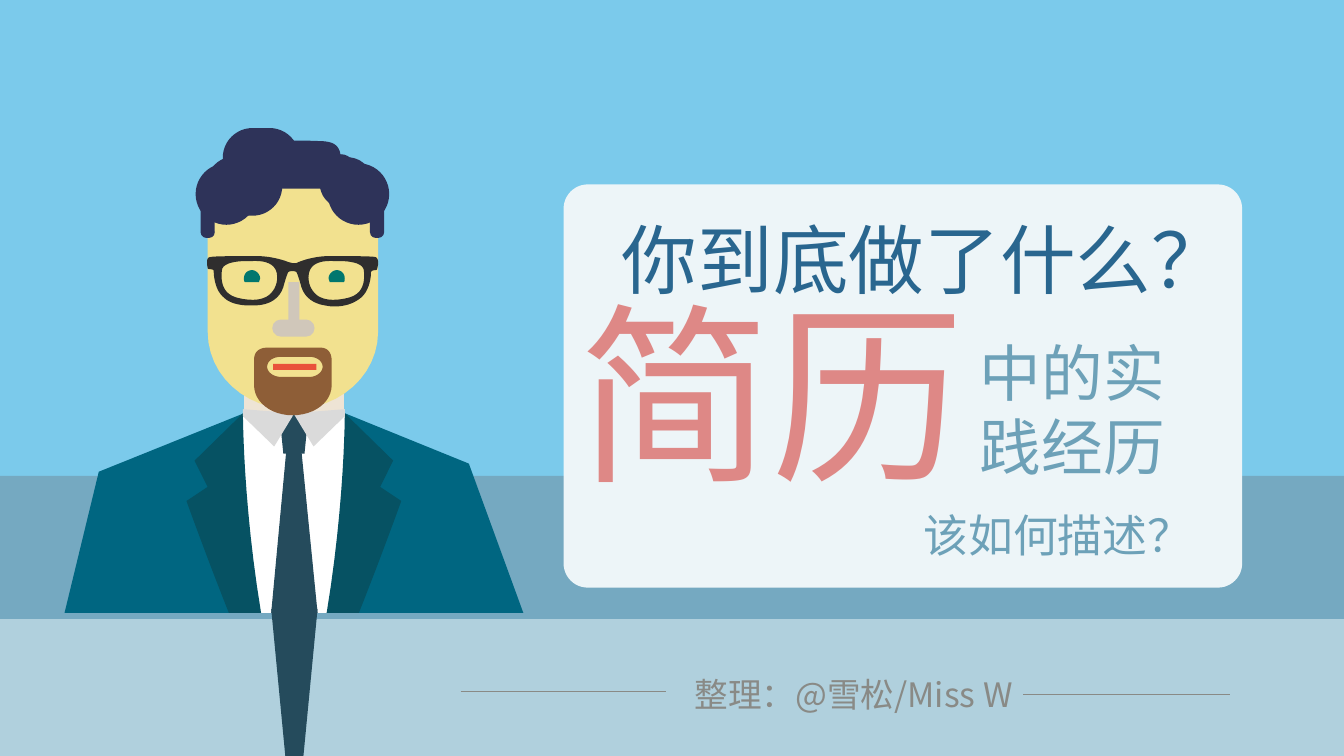
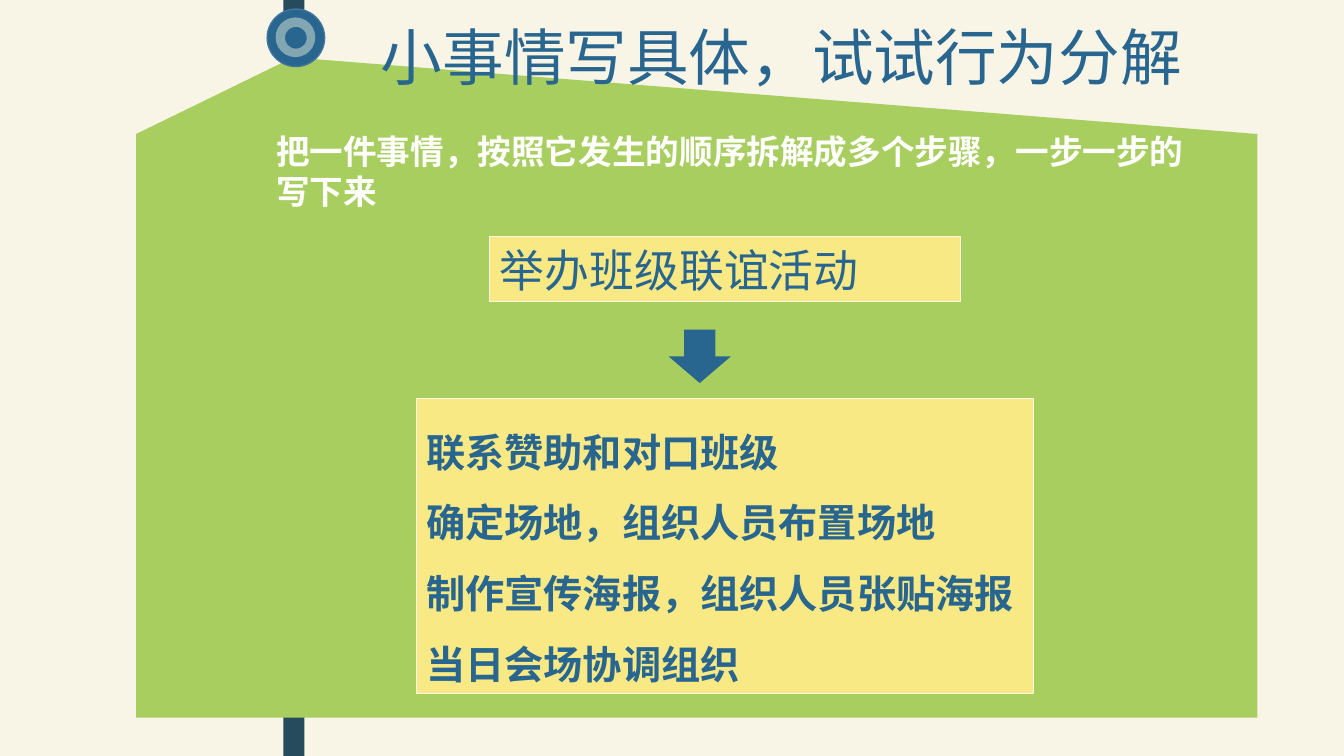
from dataclasses import dataclass, replace
from typing import Any, Optional

import lxml.etree
import pptx
import pptx.dml.color
import pptx.enum.shapes
import pptx.enum.text
import pptx.oxml.ns
import pptx.util

EMU_PER_PX = 9144
SLIDE_WIDTH, SLIDE_HEIGHT = 1333, 750
CURVE_STEPS = 12
HEAD_AXIS, JACKET_AXIS, EYE_AXIS, GLASSES_AXIS = 580, 583, 584, 581

KIND = pptx.enum.shapes.MSO_SHAPE
ALIGN = pptx.enum.text.PP_ALIGN
Contour = tuple[tuple[int, ...], ...]


@dataclass(frozen=True)
class Theme:
    paper: str = "F8F5E7"
    sky: str = "7BCAEB"
    desk: str = "B0D0DD"
    wall: str = "75A9C1"
    card: str = "EDF5F8"
    blue: str = "29668F"
    ring_edge: str = "43739E"
    ring: str = "83A6B3"
    soft_blue: str = "6DA1B8"
    coral: str = "DE8886"
    gray: str = "898A86"
    green: str = "A8CE5F"
    yellow: str = "F8E985"
    white: str = "FFFFFF"
    navy: str = "254B5C"
    skin: str = "F2E18F"
    hair: str = "2E3359"
    neck: str = "EEE4D5"
    jacket: str = "006681"
    lapel: str = "065263"
    collar: str = "DADADA"
    lips: str = "E9523B"
    beard: str = "8E5E37"
    nose: str = "D0C7BA"
    eye: str = "01776E"
    glasses: str = "2F2E2E"
    font: str = "Noto Sans CJK JP"
    accent_font: str = "Noto Sans CJK SC"
    hero: int = 138
    headline: int = 54
    title: int = 44
    subtitle: int = 32
    steps: int = 28
    body: int = 24


THEME = Theme()


@dataclass(frozen=True)
class Block:
    kind: Any
    left: int
    top: int
    width: int
    height: int
    fill: str
    edge: Optional[str] = None
    edge_width: float = 1
    adjust: Optional[float] = None


@dataclass(frozen=True)
class Outline:
    fill: str
    contours: tuple[Contour, ...]


@dataclass(frozen=True)
class Wording:
    lines: tuple[str, ...]
    size: int
    color: str
    font: str = THEME.font
    bold: bool = False
    wrap: bool = True
    spacing: Optional[float] = None
    align: Any = ALIGN.LEFT


@dataclass(frozen=True)
class Label:
    left: int
    top: int
    width: int
    height: int
    wording: Wording


def px(value: float) -> int:
    return round(value * EMU_PER_PX)


def rgb(color: str) -> pptx.dml.color.RGBColor:
    return pptx.dml.color.RGBColor.from_string(color)


def mirror_contour(contour: Contour, axis: int) -> Contour:
    return tuple(
        tuple(axis - v if i % 2 == 0 else v for i, v in enumerate(step)) for step in contour
    )


def mirror(part: Block | Outline, axis: int) -> Block | Outline:
    if isinstance(part, Block):
        return replace(part, left=axis - part.left - part.width)
    return replace(part, contours=tuple(mirror_contour(c, axis) for c in part.contours))


def paint(shape: Any, fill: str, edge: Optional[str] = None, edge_width: float = 1) -> None:
    shape.shadow.inherit = False
    shape.fill.solid()
    shape.fill.fore_color.rgb = rgb(fill)
    if edge is None:
        shape.line.fill.background()
    else:
        shape.line.color.rgb = rgb(edge)
        shape.line.width = pptx.util.Pt(edge_width)


def flatten(contour: Contour) -> list[tuple[int, int]]:
    points = [(float(contour[0][0]), float(contour[0][1]))]
    for step in contour[1:]:
        if len(step) == 2:
            points.append((step[0], step[1]))
            continue
        x0, y0 = points[-1]
        x1, y1, x2, y2, x3, y3 = step
        for i in range(1, CURVE_STEPS + 1):
            t = i / CURVE_STEPS
            a, b, c, d = (1 - t) ** 3, 3 * t * (1 - t) ** 2, 3 * t * t * (1 - t), t**3
            points.append((a * x0 + b * x1 + c * x2 + d * x3, a * y0 + b * y1 + c * y2 + d * y3))
    return [(px(x), px(y)) for x, y in points]


def draw(shapes: Any, part: Block | Outline) -> Any:
    if isinstance(part, Block):
        shape = shapes.add_shape(
            part.kind, px(part.left), px(part.top), px(part.width), px(part.height)
        )
        if part.adjust is not None:
            shape.adjustments[0] = part.adjust
        paint(shape, part.fill, part.edge, part.edge_width)
        return shape
    outer, *holes = [flatten(contour) for contour in part.contours]
    builder = shapes.build_freeform(*outer[0], scale=1.0)
    builder.add_line_segments(outer[1:], close=True)
    for hole in holes:
        builder.move_to(*hole[0])
        builder.add_line_segments(hole[1:], close=True)
    shape = builder.convert_to_shape()
    paint(shape, part.fill)
    return shape


def write(shape: Any, wording: Wording) -> None:
    frame = shape.text_frame
    frame.word_wrap = wording.wrap
    frame.auto_size = pptx.enum.text.MSO_AUTO_SIZE.SHAPE_TO_FIT_TEXT
    for i, line in enumerate(wording.lines):
        paragraph = frame.paragraphs[0] if i == 0 else frame.add_paragraph()
        paragraph.text = line
        paragraph.alignment = wording.align
        if wording.spacing is not None:
            paragraph.line_spacing = wording.spacing
        font = paragraph.font
        font.size = pptx.util.Pt(wording.size)
        font.bold = wording.bold
        font.color.rgb = rgb(wording.color)
        font.name = wording.font
        defaults = paragraph._p.pPr.find(pptx.oxml.ns.qn("a:defRPr"))
        lxml.etree.SubElement(defaults, pptx.oxml.ns.qn("a:ea"), typeface=wording.font)


def add_label(shapes: Any, label: Label) -> None:
    box = shapes.add_textbox(px(label.left), px(label.top), px(label.width), px(label.height))
    write(box, label.wording)


def add_rule(shapes: Any, left: int, right: int, y: int) -> None:
    rule = shapes.add_connector(
        pptx.enum.shapes.MSO_CONNECTOR.STRAIGHT, px(left), px(y), px(right), px(y)
    )
    rule.line.color.rgb = rgb(THEME.gray)
    rule.line.width = pptx.util.Pt(0.5)
    lxml.etree.SubElement(rule._element.spPr, pptx.oxml.ns.qn("a:effectLst"))


def portrait_parts() -> list[Block | Outline]:
    t = THEME
    head = Outline(t.skin, ((
        (206, 237), (206, 329), (206, 372, 243, 406, 290, 406), (337, 406, 375, 372, 375, 329),
        (375, 237), (375, 195, 337, 161, 290, 161), (244, 161, 206, 195, 206, 237)),))
    curls = [
        Block(KIND.OVAL, 194, 162, 61, 61, t.hair),
        Block(KIND.OVAL, 228, 153, 28, 28, t.hair),
        Block(KIND.OVAL, 247, 152, 25, 25, t.hair),
        Block(KIND.ROUNDED_RECTANGLE, 199, 194, 14, 42, t.hair, adjust=0.4),
    ]
    locks = [
        Block(KIND.ROUNDED_RECTANGLE, left, top, width, height, t.hair, adjust=0.5)
        for left, top, width, height in ((204, 155, 76, 59), (221, 127, 76, 59), (317, 156, 53, 51))
    ]
    fringe = Outline(t.hair, ((
        (338, 187), (270, 187), (270, 140), (270, 140, 303, 139, 317, 140),
        (332, 140, 338, 145, 338, 158)),))
    jacket = Outline(t.jacket, ((
        (64, 608), (98, 468), (118, 460), (247, 408), (291, 411), (337, 408), (465, 460),
        (519, 608)),))
    shirt = Outline(t.white, ((
        (333, 608), (340, 584), (367, 451), (342, 413), (340, 411), (306, 411), (244, 409),
        (239, 417), (227, 450), (206, 495), (233, 608)),))
    lapel = Outline(t.lapel, ((
        (227, 608), (259, 608), (241, 500, 241, 410, 241, 410), (193, 457), (206, 483), (185, 497),
        (185, 497, 204, 550, 227, 608)),))
    tie = Outline(t.navy, (((315, 608), (299, 447), (284, 447), (269, 608)),))
    knot = Outline(t.navy, (((306, 410), (277, 410), (281, 450), (302, 450)),))
    collar = Outline(t.collar, (((292, 410), (272, 443), (241, 413), (241, 406)),))
    beard = Outline(t.beard, (
        ((265, 345), (318, 345), (318, 345, 329, 344, 329, 358), (329, 382),
         (329, 399, 312, 412, 290, 412), (269, 412, 252, 399, 252, 382), (252, 357),
         (252, 344, 265, 345, 265, 345)),
        ((279, 374), (307, 374), (314, 374, 320, 369, 320, 364), (320, 358, 314, 354, 307, 354),
         (279, 354), (271, 354, 265, 358, 265, 364), (265, 369, 271, 374, 279, 374))))
    eye = Outline(t.eye, ((
        (250, 268), (245, 268, 242, 272, 242, 276), (242, 278, 242, 279, 243, 280), (257, 280),
        (257, 279, 258, 277, 258, 276), (258, 272, 254, 268, 250, 268)),))
    lens: Contour = (
        (263, 295), (253, 300, 237, 296, 234, 295), (217, 290, 220, 272, 220, 269),
        (220, 258, 245, 259, 249, 259), (254, 259, 275, 257, 275, 275),
        (275, 289, 264, 295, 263, 295))
    frame: Contour = (
        (372, 255), (369, 254, 331, 254, 328, 254), (308, 254, 294, 261, 294, 261), (290, 261),
        (286, 260), (286, 260, 272, 254, 253, 254), (249, 254, 212, 254, 209, 255),
        (207, 255, 204, 256, 206, 266), (206, 268, 212, 266, 212, 269),
        (212, 270, 212, 288, 223, 296), (225, 298, 233, 304, 252, 303),
        (256, 303, 275, 303, 281, 285), (282, 281, 285, 271, 286, 270),
        (287, 269, 289, 269, 290, 269), (291, 269, 293, 269, 294, 270),
        (295, 271, 298, 281, 299, 285), (305, 303, 324, 303, 328, 304),
        (346, 305, 354, 298, 356, 297), (368, 289, 368, 271, 368, 270),
        (369, 267, 374, 269, 374, 267), (377, 257, 373, 255, 372, 255))
    return [
        Block(KIND.RECTANGLE, 242, 387, 99, 25, t.neck), head,
        *curls, *(mirror(curl, HEAD_AXIS) for curl in curls), *locks, fringe,
        jacket, shirt, lapel, mirror(lapel, JACKET_AXIS), tie, knot,
        collar, mirror(collar, JACKET_AXIS),
        Block(KIND.RECTANGLE, 271, 361, 43, 6, t.lips), beard,
        Block(KIND.ROUNDED_RECTANGLE, 270, 317, 42, 17, t.nose, adjust=0.5),
        Block(KIND.RECTANGLE, 286, 280, 11, 41, t.nose),
        eye, mirror(eye, EYE_AXIS),
        Outline(t.glasses, (frame, lens, mirror_contour(lens, GLASSES_AXIS))),
    ]


def build_cover(shapes: Any) -> None:
    t = THEME
    for top, height, fill in ((0, SLIDE_HEIGHT, t.sky), (608, 142, t.desk), (472, 142, t.wall)):
        draw(shapes, Block(KIND.RECTANGLE, 0, top, SLIDE_WIDTH, height, fill))
    portrait = shapes.add_group_shape().shapes
    for part in portrait_parts():
        draw(portrait, part)
    draw(shapes, Block(KIND.ROUNDED_RECTANGLE, 559, 183, 673, 400, t.card, adjust=0.06))
    for label in (
        Label(607, 206, 550, 101, Wording(("你到底做了什么？",), t.headline, t.blue)),
        Label(564, 267, 550, 242, Wording(("简历",), t.hero, t.coral, t.accent_font)),
        Label(962, 327, 261, 158, Wording(("中的实践经历",), t.title, t.soft_blue)),
        Label(906, 499, 289, 64, Wording(("该如何描述？",), t.subtitle, t.soft_blue, wrap=False)),
        Label(679, 664, 362, 50,
              Wording(("整理：@雪松/Miss W",), t.body, t.gray, t.accent_font)),
    ):
        add_label(shapes, label)
    add_rule(shapes, 457, 661, 686)
    add_rule(shapes, 1015, 1220, 689)
    draw(shapes, Outline(t.navy, (((269, 604), (315, 604), (301, 750), (283, 750)),)))


def build_breakdown(shapes: Any) -> None:
    t = THEME
    draw(shapes, Block(KIND.RECTANGLE, 281, 0, 21, SLIDE_HEIGHT, t.navy))
    house = shapes.add_group_shape().shapes
    draw(house, Block(KIND.RECTANGLE, 135, 133, 1112, 579, t.green))
    draw(house, Block(KIND.ISOSCELES_TRIANGLE, 135, 57, 1112, 76, t.green, adjust=0.14))
    add_label(shapes, Label(368, 14, 836, 84,
                            Wording(("小事情写具体，试试行为分解",), t.title, t.blue)))
    badge = shapes.add_group_shape().shapes
    for size, fill, edge in ((57, t.blue, t.ring_edge), (38, t.ring, t.ring), (23, t.blue, t.ring)):
        draw(badge, Block(KIND.OVAL, 293 - size // 2, 37 - size // 2, size, size, fill, edge))
    activity = draw(shapes, Block(KIND.RECTANGLE, 486, 235, 467, 64, t.yellow, t.paper, 0.75))
    write(activity, Wording(("举办班级联谊活动",), t.subtitle, t.blue, align=ALIGN.JUSTIFY))
    steps = draw(shapes, Block(KIND.RECTANGLE, 413, 395, 612, 293, t.yellow, t.paper, 0.75))
    write(steps, Wording(
        ("联系赞助和对口班级", "确定场地，组织人员布置场地",
         "制作宣传海报，组织人员张贴海报", "当日会场协调组织"),
        t.steps, t.blue, bold=True, wrap=False, spacing=1.5))
    draw(shapes, Block(KIND.DOWN_ARROW, 663, 327, 62, 53, t.blue))
    add_label(shapes, Label(264, 125, 922, 91, Wording(
        ("把一件事情，按照它发生的顺序拆解成多个步骤，一步一步的写下来",),
        t.body, t.white, t.accent_font, bold=True)))


def main() -> None:
    deck = pptx.Presentation()
    deck.slide_width, deck.slide_height = px(SLIDE_WIDTH), px(SLIDE_HEIGHT)
    backdrop = deck.slide_master.background.fill
    backdrop.solid()
    backdrop.fore_color.rgb = rgb(THEME.paper)
    for build in (build_cover, build_breakdown):
        build(deck.slides.add_slide(deck.slide_layouts[6]).shapes)
    deck.save("out.pptx")


if __name__ == "__main__":
    main()
